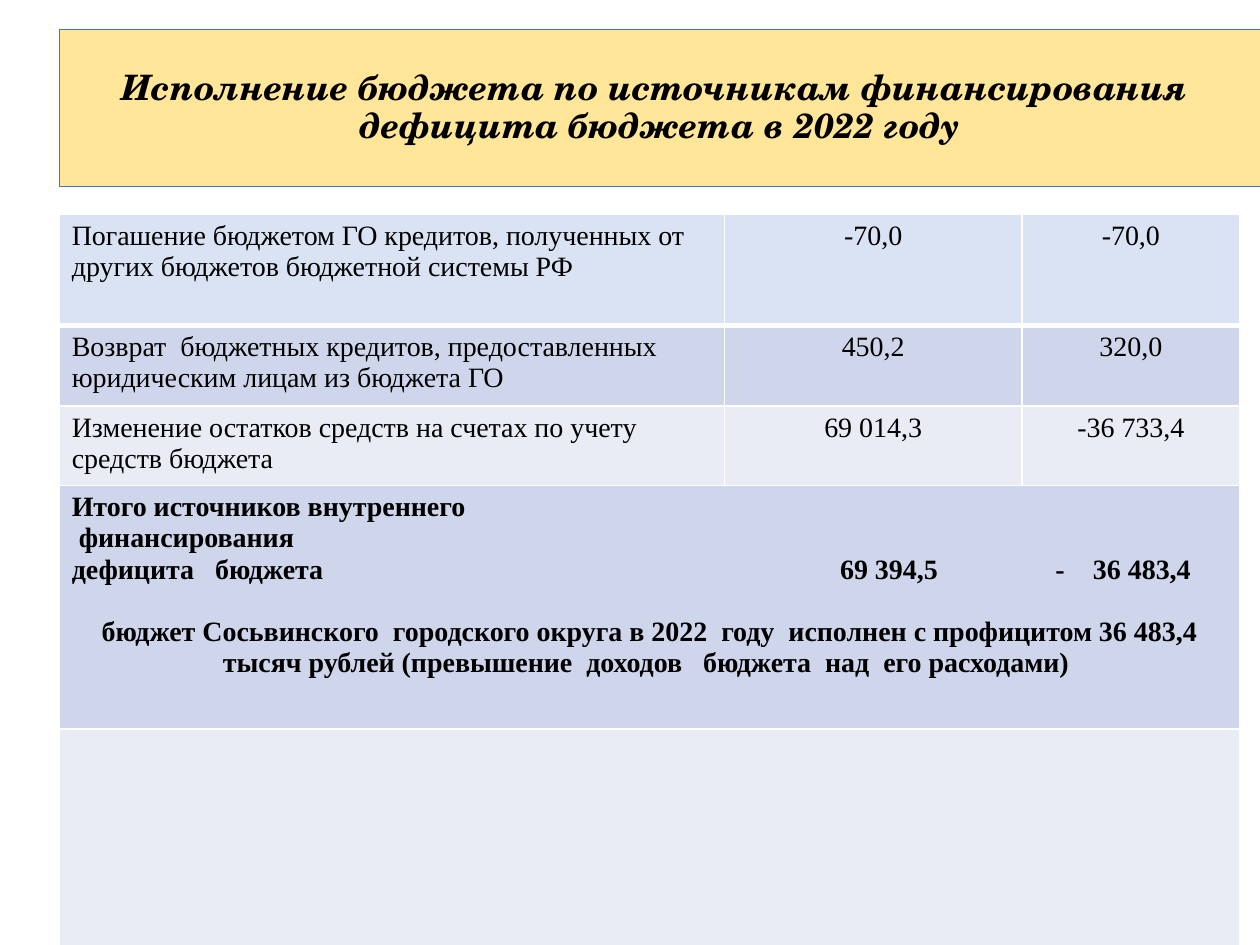
from lxml import etree
from pptx import Presentation
from pptx.dml.color import RGBColor
from pptx.enum.text import MSO_ANCHOR, MSO_AUTO_SIZE, PP_ALIGN
from pptx.oxml.ns import qn
from pptx.util import Pt

LEFT, CENTER = PP_ALIGN.LEFT, PP_ALIGN.CENTER
MIDDLE = MSO_ANCHOR.MIDDLE
NO_AUTOFIT = MSO_AUTO_SIZE.NONE
TITLE_ONLY = 5

COLORS = {
    "text": "000000",
    "title_fill": "FFE699",
    "title_line": "4472C4",
    "border": "FFFFFF",
    "first": "DAE3F3",
    "dark": "CFD5EA",
    "light": "E9EBF5",
}
TITLE_FONT = "TeX Gyre Schola"
BODY_FONT = "Times New Roman"

TITLE = "Исполнение бюджета по источникам финансирования  дефицита бюджета в 2022 году"
SOURCES = [
    ("Погашение бюджетом ГО кредитов, полученных от  других бюджетов бюджетной системы РФ",
     "-70,0", "-70,0"),
    ("Возврат  бюджетных кредитов, предоставленных юридическим лицам из бюджета ГО",
     "450,2", "320,0"),
    ("Изменение остатков средств на счетах по учету средств бюджета",
     "69 014,3", "-36 733,4"),
]
TOTAL_LINES = [
    "Итого источников внутреннего",
    " финансирования",
    "дефицита   бюджета\t69 394,5\t-\t36 483,4",
]
CONCLUSION = (" бюджет Сосьвинского  городского округа в 2022  году  исполнен с профицитом 36 483,4"
              "  тысяч рублей (превышение  доходов   бюджета  над  его расходами) ")
TOTAL_TABS = (439, 562, 583.5)
COLUMN_WIDTHS = (380.2, 169.9, 124.6)
ROW_HEIGHTS = (63.4, 46.1, 45.4, 139, 162.7)
ROW_FILLS = ("first", "dark", "light", "dark", "light")


def color(name):
    return RGBColor.from_string(COLORS[name])


def write_text(para, text, font=BODY_FONT, size=16, bold=False, italic=False,
               align=LEFT, before=0, line_spacing=None):
    para.alignment = align
    para.space_before = Pt(before)
    if line_spacing:
        para.line_spacing = line_spacing
    span = para.add_run()
    span.text = text
    span.font.name = font
    span.font.size = Pt(size)
    span.font.bold = bold
    span.font.italic = italic
    span.font.color.rgb = color("text")


def add_tabs(para, positions):
    tabs = etree.SubElement(para._p.get_or_add_pPr(), qn("a:tabLst"))
    for position in positions:
        etree.SubElement(tabs, qn("a:tab"), pos=str(Pt(position)), algn="l")


def set_borders(cell, top=1, bottom=1):
    properties = cell._tc.get_or_add_tcPr()
    for side, width in (("L", 1), ("R", 1), ("T", top), ("B", bottom)):
        line = etree.SubElement(properties, qn(f"a:ln{side}"), w=str(Pt(width)))
        fill = etree.SubElement(line, qn("a:solidFill"))
        etree.SubElement(fill, qn("a:srgbClr"), val=COLORS["border"])


def format_title(box):
    box.left, box.top, box.width, box.height = Pt(33.84), Pt(16.6), Pt(686.16), Pt(90)
    box.fill.solid()
    box.fill.fore_color.rgb = color("title_fill")
    box.line.color.rgb = color("title_line")
    box.line.width = Pt(0.5)
    frame = box.text_frame
    frame.word_wrap = True
    frame.auto_size = NO_AUTOFIT
    frame.vertical_anchor = MIDDLE
    write_text(frame.paragraphs[0], TITLE, font=TITLE_FONT, size=20, bold=True,
               italic=True, align=CENTER, line_spacing=0.9)


def add_budget_table(page):
    frame = page.shapes.add_table(
        len(ROW_HEIGHTS), len(COLUMN_WIDTHS), Pt(33.84), Pt(122.6),
        Pt(sum(COLUMN_WIDTHS)), Pt(sum(ROW_HEIGHTS)))
    table = frame.table
    table.first_row = False
    table.horz_banding = False
    for column, width in zip(table.columns, COLUMN_WIDTHS):
        column.width = Pt(width)
    for index, (row, height) in enumerate(zip(table.rows, ROW_HEIGHTS)):
        row.height = Pt(height)
        for cell in row.cells:
            set_borders(cell, top=3 if index == 1 else 1, bottom=3 if index == 0 else 1)
            cell.fill.solid()
            cell.fill.fore_color.rgb = color(ROW_FILLS[index])
    return table


def fill_sources(table):
    for row, values in enumerate(SOURCES):
        for column, value in enumerate(values):
            para = table.cell(row, column).text_frame.paragraphs[0]
            write_text(para, value, align=CENTER if column else LEFT)


def fill_total(table):
    first_merged = len(SOURCES)
    for row in range(first_merged, len(ROW_HEIGHTS)):
        table.cell(row, 0).merge(table.cell(row, len(COLUMN_WIDTHS) - 1))
    frame = table.cell(first_merged, 0).text_frame
    para = frame.paragraphs[0]
    for line in TOTAL_LINES:
        write_text(para, line, bold=True)
        if "\t" in line:
            add_tabs(para, TOTAL_TABS)
        para = frame.add_paragraph()
    write_text(para, CONCLUSION, bold=True, align=CENTER, before=18)


def main():
    deck = Presentation()
    deck.slide_width, deck.slide_height = Pt(720), Pt(540)
    page = deck.slides.add_slide(deck.slide_layouts[TITLE_ONLY])
    table = add_budget_table(page)
    fill_sources(table)
    fill_total(table)
    format_title(page.shapes.title)
    deck.save("out.pptx")


if __name__ == "__main__":
    main()
